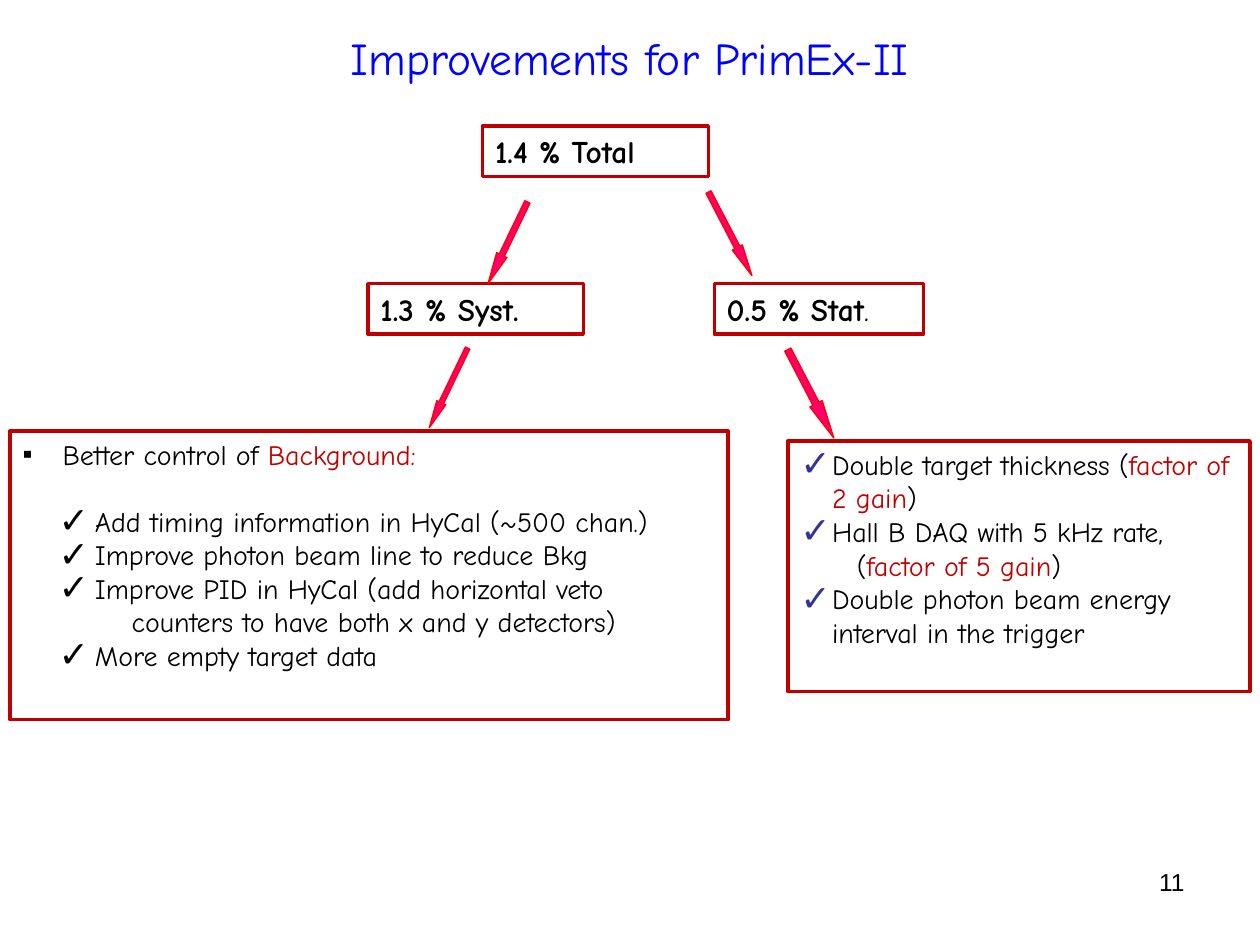
from lxml import etree
from pptx import Presentation
from pptx.dml.color import RGBColor
from pptx.enum.shapes import MSO_SHAPE
from pptx.enum.text import MSO_ANCHOR, MSO_AUTO_SIZE, PP_ALIGN
from pptx.oxml.ns import qn
from pptx.util import Cm, Pt

RECT, ARROW = MSO_SHAPE.RECTANGLE, MSO_SHAPE.RIGHT_ARROW
TOP, MID = MSO_ANCHOR.TOP, MSO_ANCHOR.MIDDLE
LEFT, MIDDLE, RIGHT = PP_ALIGN.LEFT, PP_ALIGN.CENTER, PP_ALIGN.RIGHT
FIXED = MSO_AUTO_SIZE.NONE

COLORS = {
    "title": "0000FF", "text": "000000", "key": "C00000", "frame": "C00000",
    "arrow": "FF0066", "edge": "FF0000", "check": "333399",
}


class Deck:
    font = "Comic Neue"

    def __init__(self):
        self.prs = Presentation()
        self.prs.slide_width, self.prs.slide_height = Cm(25.4), Cm(19.05)
        self.slide = self.prs.slides.add_slide(self.prs.slide_layouts[3])

    def color(self, name):
        return RGBColor.from_string(COLORS[name])

    def place(self, shape, box):
        shape.left, shape.top, shape.width, shape.height = map(Cm, box)

    def frame(self, shape, anchor=TOP):
        tf = shape.text_frame
        tf.word_wrap, tf.auto_size = True, FIXED
        tf.vertical_anchor = anchor
        return tf

    def outline(self, shape, name="frame", width=2):
        shape.line.color.rgb = self.color(name)
        shape.line.width = Pt(width)

    def run(self, para, text, size, color="text", bold=False, font=None):
        run = para.add_run()
        run.text = text
        run.font.size, run.font.bold = Pt(size), bold
        run.font.name = font or self.font
        run.font.color.rgb = self.color(color)

    def title(self, text, box):
        shape = self.slide.shapes.title
        self.place(shape, box)
        para = self.frame(shape, MID).paragraphs[0]
        para.alignment = MIDDLE
        self.run(para, text, 26, "title")

    def number(self, text, box):
        shape = self.slide.shapes.add_textbox(*map(Cm, box))
        para = self.frame(shape).paragraphs[0]
        para.alignment = RIGHT
        self.run(para, text, 14, font="Arial")

    def label(self, box, text, tail=""):
        shape = self.slide.shapes.add_shape(RECT, *map(Cm, box))
        shape.shadow.inherit = False
        shape.fill.background()
        self.outline(shape)
        para = self.frame(shape).paragraphs[0]
        para.alignment = LEFT
        self.run(para, text, 18, bold=True)
        if tail:
            self.run(para, tail, 18)

    def arrow(self, box, angle):
        shape = self.slide.shapes.add_shape(ARROW, *map(Cm, box))
        shape.shadow.inherit = False
        shape.rotation = angle
        shape.adjustments[1] = 2.78
        shape.fill.solid()
        shape.fill.fore_color.rgb = self.color("arrow")
        self.outline(shape, "edge", 0.75)

    def bullet(self, para, mark, color, scale, margin, hang):
        props = para._p.get_or_add_pPr()
        props.set("marL", str(Cm(margin)))
        props.set("indent", str(-Cm(hang)))
        if not mark:
            etree.SubElement(props, qn("a:buNone"))
            return
        tint = etree.SubElement(props, qn("a:buClr"))
        etree.SubElement(tint, qn("a:srgbClr"), val=COLORS[color])
        etree.SubElement(props, qn("a:buSzPct"), val=str(scale * 1000))
        etree.SubElement(props, qn("a:buChar"), char=mark)

    def items(self, index, box, rows, color):
        """Each row: mark, margin, hang, space after, (text, color) runs."""
        shape = self.slide.placeholders[index]
        self.place(shape, box)
        self.outline(shape)
        tf = self.frame(shape)
        for i, (mark, margin, hang, after, parts) in enumerate(rows):
            para = tf.add_paragraph() if i else tf.paragraphs[0]
            para.alignment = LEFT
            para.space_before, para.space_after = Pt(0), Pt(after)
            scale = 130 if mark == "✓" else 100
            self.bullet(para, mark, color, scale, margin, hang)
            for text, tone in parts:
                self.run(para, text, 16, tone)


def main():
    deck = Deck()
    deck.title("Improvements for PrimEx-II", (1.27, 0.2, 22.86, 1.9))
    deck.number("11", (18.21, 17.35, 5.92, 1.32))

    # Error budget tree
    deck.label((9.73, 2.54, 4.55, 1.02), "1.4 % Total")
    deck.label((7.42, 5.72, 4.34, 1.02), "1.3 % Syst.")
    deck.label((14.4, 5.72, 4.22, 1.02), "0.5 % Stat", ".")

    # Arrows down each branch
    for box, angle in [
        ((9.32, 4.78, 1.83, 0.23), 115.7),
        ((8.15, 7.72, 1.78, 0.2), 115.7),
        ((13.77, 4.6, 1.9, 0.23), 62.5),
        ((15.34, 7.8, 2.01, 0.28), 62.5),
    ]:
        deck.arrow(box, angle)

    # Systematic improvements
    check = ("✓", 1.46, 0.73, 0)
    deck.items(1, (0.2, 8.69, 14.48, 5.82), [
        ("▪", 0.81, 0.81, 19,
         [("Better control of ", "text"), ("Background:", "key")]),
        (*check, [("Add timing information in HyCal (~500 chan.)", "text")]),
        (*check, [("Improve photon beam line to reduce Bkg", "text")]),
        (*check, [("Improve PID in HyCal (add horizontal veto", "text")]),
        ("", 2.2, 0, 0,
         [("counters to have both x and y detectors)", "text")]),
        (*check, [("More empty target data", "text")]),
    ], "text")

    # Statistical improvements
    check = ("✓", 0.64, 0.64, 0)
    deck.items(2, (15.88, 8.89, 9.32, 5.05), [
        (*check, [("Double target thickness (", "text"),
                  ("factor of 2 gain", "key"), (")", "text")]),
        (*check, [("Hall B DAQ with 5 kHz rate,", "text")]),
        ("", 1.14, 0, 0, [("(", "text"), ("factor of 5 gain", "key"),
                          (")", "text")]),
        (*check, [("Double photon beam energy interval in the trigger",
                   "text")]),
    ], "check")

    deck.prs.save("out.pptx")


if __name__ == "__main__":
    main()
